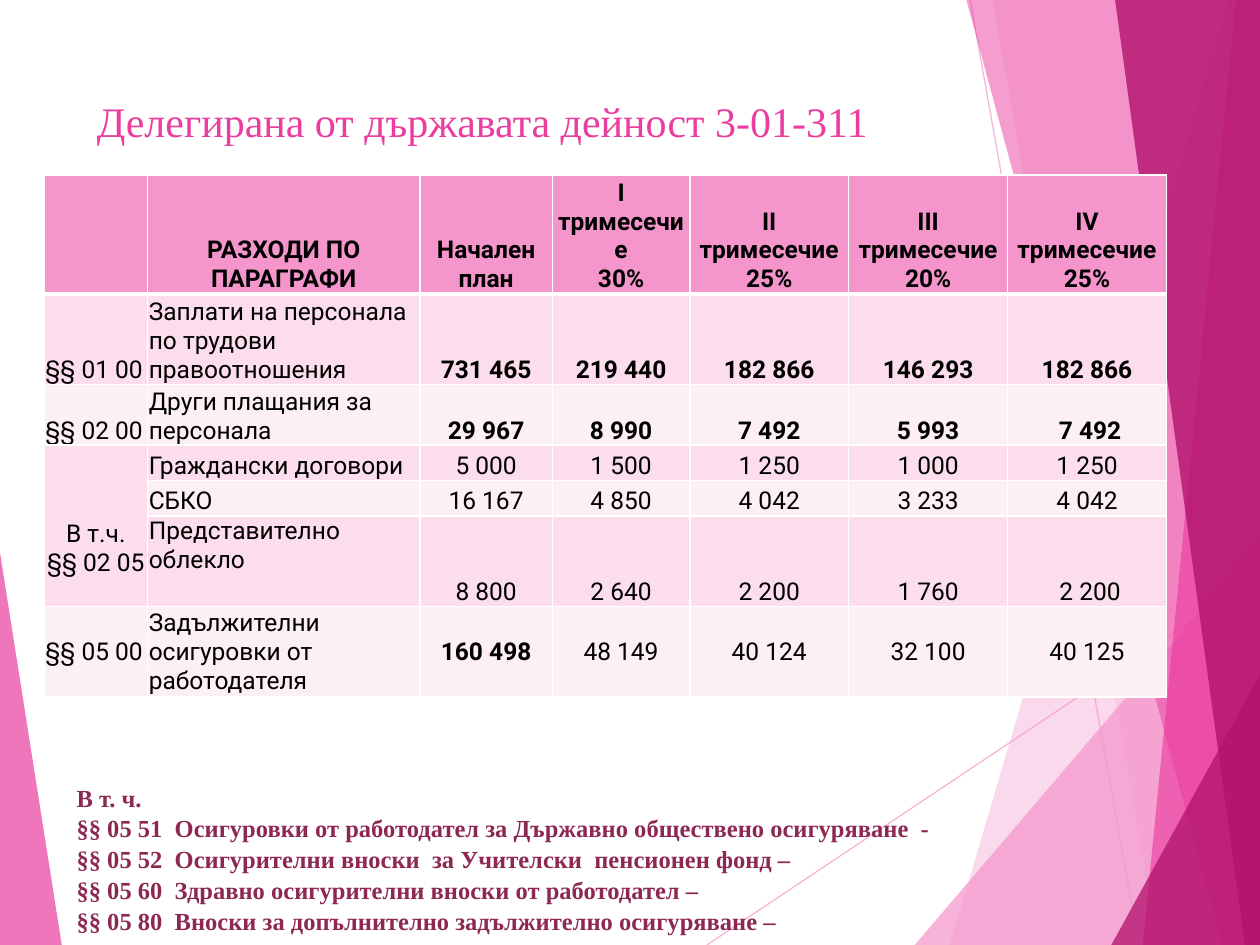
from dataclasses import dataclass

from lxml import etree
from pptx import Presentation
from pptx import util as u
from pptx.dml.color import RGBColor
from pptx.enum import shapes, text
from pptx.oxml import ns

COLORS = {"pale": "F496CB", "pink": "EB3D9F", "dark": "B2136D", "note": "8D2853",
          "text": "000000", "border": "FFFFFF", "odd": "FBDDEC", "even": "FDEFF6"}
SLIDE_WIDTH, SLIDE_HEIGHT = u.Inches(10), u.Inches(7.5)
CENTER, LEFT = text.PP_ALIGN.CENTER, text.PP_ALIGN.LEFT
TOP, MIDDLE, BOTTOM = text.MSO_ANCHOR.TOP, text.MSO_ANCHOR.MIDDLE, text.MSO_ANCHOR.BOTTOM

FACETS = [
    ("pale", 36, [(97.5, 0), (75.4, 100), (100, 100), (100, 0)]),
    ("pale", 20, [(78.8, 0), (91.9, 100), (100, 100), (100, 0)]),
    ("pale", 72, [(72.6, 100), (100, 57.2), (100, 100)]),
    ("pink", 50, [(76.7, 0), (97, 100), (100, 100), (100, 0)]),
    ("pink", 66, [(98.1, 0), (90.7, 100), (100, 100), (100, 0)]),
    ("dark", 80, [(88.5, 0), (98.8, 100), (100, 100), (100, 0)]),
    ("dark", 76, [(88.2, 100), (100, 71.4), (100, 100)]),
    ("pink", 70, [(0, 58.5), (4.9, 100), (0, 100)]),
]
RAYS = [((56.1, 100), (100, 60.9)), ((77, 0), (90.4, 100))]

COLUMNS = [82, 216, 105, 109, 126, 126, 126]
ROWS = [82, 72, 48, 28, 28, 72, 72]
EXPENSES = [
    ["", "РАЗХОДИ ПО ПАРАГРАФИ", "Начален план", "I тримесечие\n30%",
     "II тримесечие\n25%", "III тримесечие\n20%", "IV тримесечие 25%"],
    ["§§ 01 00", "Заплати на персонала по трудови правоотношения",
     "731 465", "219 440", "182 866", "146 293", "182 866"],
    ["§§ 02 00", "Други плащания за персонала",
     "29 967", "8 990", "7 492", "5 993", " 7 492"],
    ["В т.ч.\n§§ 02 05", "Граждански договори", "5 000", "1 500", "1 250", "1 000", "1 250"],
    ["", "СБКО", "16 167", "4 850", "4 042", "3 233", "4 042"],
    ["", "Представително облекло", "8 800", "2 640", "2 200", "1 760", " 2 200"],
    ["§§ 05 00", "Задължителни осигуровки от работодателя",
     "160 498", "48 149", "40 124", "32 100", "40 125"],
]
GROUP_FIRST, GROUP_LAST = 3, 5
NOTES = [
    "В т. ч.",
    "§§ 05 51  Осигуровки от работодател за Държавно обществено осигуряване  -",
    "§§ 05 52  Осигурителни вноски  за Учителски  пенсионен фонд –",
    "§§ 05 60  Здравно осигурителни вноски от работодател –",
    "§§ 05 80  Вноски за допълнително задължително осигуряване –",
]


@dataclass
class Box:
    left: float
    top: float
    width: float
    height: float

    def point(self, across, down):
        return (int(SLIDE_WIDTH * (self.left + self.width * across / 100) / 100),
                int(SLIDE_HEIGHT * (self.top + self.height * down / 100) / 100))

    def frame(self):
        left, top = self.point(0, 0)
        right, bottom = self.point(100, 100)
        return left, top, right - left, bottom - top


def set_all(target, values):
    for name, value in values.items():
        setattr(target, name, value)


def set_alpha(fill_owner, percent):
    color = next(fill_owner.iter(ns.qn("a:srgbClr")))
    etree.SubElement(color, ns.qn("a:alpha"), val=str(percent * 1000))


def write(frame, content, font, color, paragraph_format):
    frame.text = content
    for paragraph in frame.paragraphs:
        set_all(paragraph, paragraph_format)
        for run in paragraph.runs:
            set_all(run.font, font)
            run.font.color.rgb = RGBColor.from_string(COLORS[color])


def add_backdrop(slide, box):
    for start, end in RAYS:
        ray = slide.shapes.add_connector(shapes.MSO_CONNECTOR.STRAIGHT,
                                         *box.point(*start), *box.point(*end))
        ray.line.width = u.Pt(0.75)
        ray.line.color.rgb = RGBColor.from_string(COLORS["pale"])
        properties = ray._element.spPr
        set_alpha(properties, 70)
        etree.SubElement(properties, ns.qn("a:effectLst"))
    for color, alpha, corners in FACETS:
        points = [box.point(*corner) for corner in corners]
        builder = slide.shapes.build_freeform(*points[0], scale=1.0)
        builder.add_line_segments(points[1:], close=True)
        facet = builder.convert_to_shape()
        facet.shadow.inherit = False
        facet.fill.solid()
        facet.fill.fore_color.rgb = RGBColor.from_string(COLORS[color])
        facet.line.fill.background()
        set_alpha(facet._element.spPr, alpha)


def add_text(slide, box, content, font, color, margin_top, line_spacing):
    frame = slide.shapes.add_textbox(*box.frame()).text_frame
    set_all(frame, {"word_wrap": True, "vertical_anchor": TOP,
                    "margin_top": u.Inches(margin_top)})
    write(frame, content, font, color, {"line_spacing": line_spacing})


def set_borders(cell, widths):
    properties = cell._tc.get_or_add_tcPr()
    for index, (side, width) in enumerate(widths.items()):
        border = etree.Element(ns.qn(f"a:ln{side}"), w=str(u.Pt(width)))
        fill = etree.SubElement(border, ns.qn("a:solidFill"))
        etree.SubElement(fill, ns.qn("a:srgbClr"), val=COLORS["border"])
        properties.insert(index, border)


def cell_anchor(row, column):
    if row == len(ROWS) - 1:
        return MIDDLE
    return TOP if (row, column) == (GROUP_LAST, 1) else BOTTOM


def is_bold(row, column):
    return row == 0 or (column >= 2 and row in (1, 2)) or (row, column) == (6, 2)


def add_expense_table(slide, box):
    table = slide.shapes.add_table(len(ROWS), len(COLUMNS), *box.frame()).table
    set_all(table, {"first_row": False, "horz_banding": False})
    width, height = box.frame()[2:]
    for column, share in zip(table.columns, COLUMNS):
        column.width = int(width * share / sum(COLUMNS))
    for row, share in zip(table.rows, ROWS):
        row.height = int(height * share / sum(ROWS))
    for row, values in enumerate(EXPENSES):
        fill = "pale" if row == 0 else ("even", "odd")[row % 2]
        for column, value in enumerate(values):
            cell = table.cell(row, column)
            grouped = column == 0 and row == GROUP_FIRST
            set_all(cell, {"margin_left": u.Inches(0.01), "margin_right": u.Inches(0.01),
                           "margin_top": u.Inches(0.01),
                           "margin_bottom": u.Inches(0.23 if grouped else 0),
                           "vertical_anchor": cell_anchor(row, column)})
            cell.fill.solid()
            cell.fill.fore_color.rgb = RGBColor.from_string(COLORS[fill])
            centered = row == 0 or column >= 2 or grouped
            write(cell.text_frame, value,
                  {"name": "Roboto", "size": u.Pt(14), "bold": is_bold(row, column)},
                  "text", {"alignment": CENTER if centered else LEFT})
            set_borders(cell, {"L": 1, "R": 1, "T": 3 if row == 1 else 1,
                               "B": 3 if row == 0 else 1})
    table.cell(GROUP_FIRST, 0).merge(table.cell(GROUP_LAST, 0))


def main():
    presentation = Presentation()
    set_all(presentation, {"slide_width": SLIDE_WIDTH, "slide_height": SLIDE_HEIGHT})
    slide = presentation.slides.add_slide(presentation.slide_layouts[6])
    add_backdrop(slide, Box(0, 0, 100, 100))
    add_text(slide, Box(6.7, 8.93, 69.4, 19.2), "Делегирана от държавата дейност 3-01-311",
             {"name": "Times New Roman", "size": u.Pt(24)}, "pink", 0.09, 1.0)
    add_expense_table(slide, Box(3.5, 18.53, 89.1, 53.6))
    add_text(slide, Box(5.1, 78.4, 82.7, 20.67), "\n".join(NOTES),
             {"name": "Times New Roman", "size": u.Pt(14), "bold": True}, "note", 0.32, 1.05)
    presentation.save("out.pptx")


if __name__ == "__main__":
    main()
